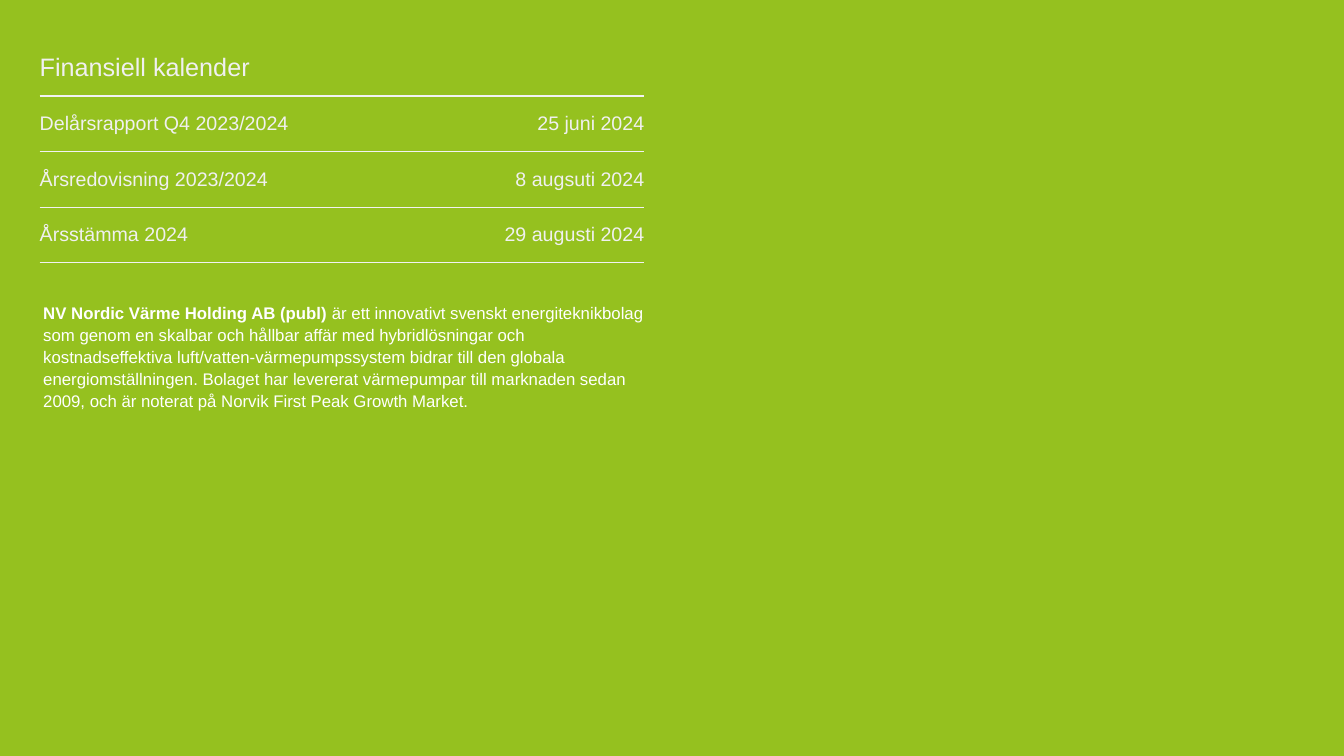
import pptx
import pptx.util
import pptx.dml.color
import pptx.enum.text
import pptx.oxml
import pptx.oxml.ns

Cm = pptx.util.Cm
Pt = pptx.util.Pt
Align = pptx.enum.text.PP_ALIGN
LIME, PALE, WHITE = "95C11F", "F0F0F0", "FFFFFF"
RULE = "F2F2F2"
PLAIN = "{2D5ABB26-0587-4C30-8999-92F81FD0307C}"  # table style without grid

HEAD = "Finansiell kalender"
DATES = [
    ("Delårsrapport Q4 2023/2024", "25 juni 2024"),
    ("Årsredovisning 2023/2024", "8 augsuti 2024"),
    ("Årsstämma 2024", "29 augusti 2024"),
]
NAME = "NV Nordic Värme Holding AB (publ) "
ABOUT = (
    "är ett innovativt svenskt energiteknikbolag som genom en skalbar och "
    "hållbar affär med hybridlösningar och kostnadseffektiva "
    "luft/vatten-värmepumpssystem bidrar till den globala "
    "energiomställningen. Bolaget har levererat värmepumpar till marknaden "
    "sedan 2009, och är noterat på Norvik First Peak Growth Market."
)


def color(code):
    return pptx.dml.color.RGBColor.from_string(code)


def apply(item, style):
    for key, value in style.items():
        setattr(item, key, value)


def add_run(para, text, size, code, bold=False):
    run = para.add_run()
    run.text = text
    apply(run.font, {"name": "Arial", "size": Pt(size), "bold": bold})
    run.font.color.rgb = color(code)


def rule_cell(cell, sides):
    """Draw borders; sides maps T or B to a width in points."""
    props = cell._tc.get_or_add_tcPr()
    for spot, side in enumerate("LRTB"):
        width = sides.get(side)
        fill = (f'<a:solidFill><a:srgbClr val="{RULE}"/></a:solidFill>'
                if width else "<a:noFill/>")
        props.insert(spot, pptx.oxml.parse_xml(
            f'<a:ln{side} {pptx.oxml.ns.nsdecls("a")} w="{Pt(width or 0)}">'
            f"{fill}</a:ln{side}>"))


def fill_cell(cell, text, size, left=0, right=0, align=Align.LEFT):
    apply(cell, {
        "vertical_anchor": pptx.enum.text.MSO_ANCHOR.MIDDLE,
        "margin_left": Cm(left), "margin_right": Cm(right),
        "margin_top": Cm(0.13), "margin_bottom": Cm(0.13),
    })
    para = cell.text_frame.paragraphs[0]
    para.alignment = align
    add_run(para, text, size, PALE)


def add_dates(slide, left, top, width, height):
    count = len(DATES) + 1
    table = slide.shapes.add_table(
        count, 2, Cm(left), Cm(top), Cm(width), Cm(height)).table
    apply(table, {"first_row": False, "horz_banding": False})
    table._tbl.tblPr.find(pptx.oxml.ns.qn("a:tableStyleId")).text = PLAIN
    for row in table.rows:
        row.height = Cm(height / count)
    for cell in table.iter_cells():
        cell.fill.background()
    table.cell(0, 0).merge(table.cell(0, 1))
    fill_cell(table.cell(0, 0), HEAD, 18)
    for num, (event, date) in enumerate(DATES, 1):
        fill_cell(table.cell(num, 0), event, 14, right=0.25)
        fill_cell(table.cell(num, 1), date, 14, left=0.25, align=Align.RIGHT)
    for num in range(count):
        sides = {"B": 0.5 if num else 1}
        if num:
            sides["T"] = 1 if num == 1 else 0.5
        for col in range(2):
            rule_cell(table.cell(num, col), sides)


def add_about(slide, left, top, width, height):
    box = slide.shapes.add_textbox(Cm(left), Cm(top), Cm(width), Cm(height))
    frame = box.text_frame
    apply(frame, {
        "word_wrap": True,
        "auto_size": pptx.enum.text.MSO_AUTO_SIZE.SHAPE_TO_FIT_TEXT,
        "margin_left": 0, "margin_right": 0,
        "margin_top": 0, "margin_bottom": 0,
    })
    para = frame.paragraphs[0]
    apply(para, {"line_spacing": 1.1, "space_after": Pt(6)})
    add_run(para, NAME, 12, WHITE, bold=True)
    add_run(para, ABOUT, 12, WHITE)


def main():
    deck = pptx.Presentation()
    apply(deck, {"slide_width": Cm(33.87), "slide_height": Cm(19.05)})
    slide = deck.slides.add_slide(deck.slide_layouts[6])
    fill = slide.background.fill
    fill.solid()
    fill.fore_color.rgb = color(LIME)
    add_dates(slide, 1, 1.02, 15.24, 5.6)
    add_about(slide, 1.09, 7.57, 15.14, 2.77)
    deck.save("out.pptx")


if __name__ == "__main__":
    main()
